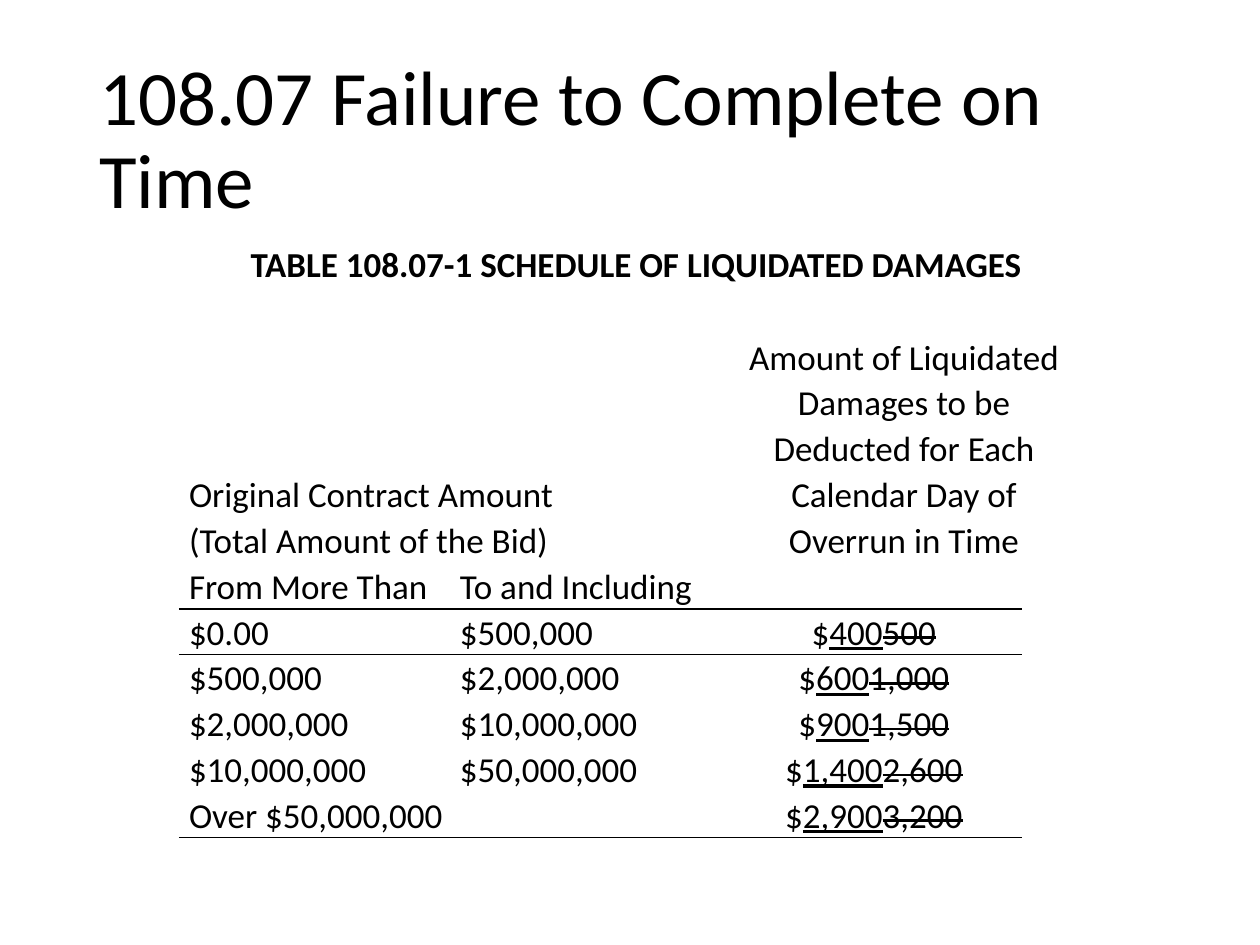
from dataclasses import dataclass
from typing import Any, NamedTuple

from lxml.etree import SubElement
from pptx import Presentation
from pptx.dml.color import RGBColor
from pptx.enum.text import MSO_ANCHOR, PP_ALIGN
from pptx.oxml.ns import qn
from pptx.util import Emu, Inches, Pt


@dataclass(frozen=True)
class Theme:
    font: str = "Calibri"
    ink: str = "000000"
    title_size: int = 44
    body_size: int = 20
    rule_width: int = 1
    line_spacing: float = 1.07
    plain_table: str = "{2D5ABB26-0587-4C30-8999-92F81FD0307C}"


class Area(NamedTuple):
    """Left, top, width and height in percent of the slide."""
    left: float
    top: float
    width: float
    height: float


class Damages(NamedTuple):
    more_than: str
    up_to: str
    new_amount: str
    old_amount: str


THEME = Theme()
WIDTH, HEIGHT = Inches(10), Inches(7.5)
TITLE_AREA = Area(6.9, 5.33, 86.2, 19.33)
CAPTION_AREA = Area(11, 24.67, 79, 6.13)
COLUMN_SHARES = (21.5, 21.9, 23.5, 4.8)
LINE_SHARE = 4.85
HEADER_LINES = ("Amount of Liquidated", "Damages to be", "Deducted for Each",
                "Calendar Day of", "Overrun in Time")
SCHEDULE = (
    Damages("$0.00", "$500,000", "400", "500"),
    Damages("$500,000", "$2,000,000", "600", "1,000"),
    Damages("$2,000,000", "$10,000,000", "900", "1,500"),
    Damages("$10,000,000", "$50,000,000", "1,400", "2,600"),
    Damages("Over $50,000,000", "", "2,900", "3,200"),
)
ROW_LINES = (len(HEADER_LINES), 1) + (1,) * len(SCHEDULE)
TABLE_AREA = Area(14.2, 35.33, sum(COLUMN_SHARES), LINE_SHARE * sum(ROW_LINES))


def across(share: float) -> Emu:
    return Emu(round(WIDTH * share / 100))


def down(share: float) -> Emu:
    return Emu(round(HEIGHT * share / 100))


def place(area: Area) -> tuple[Emu, Emu, Emu, Emu]:
    return across(area.left), down(area.top), across(area.width), down(area.height)


def apply(target: Any, values: dict[str, Any]) -> None:
    for name, value in values.items():
        setattr(target, name, value)


def style_font(font: Any, size: int, **extra: Any) -> None:
    apply(font, {"name": THEME.font, "size": Pt(size), **extra})
    font.color.rgb = RGBColor.from_string(THEME.ink)


def add_text(slide: Any, area: Area, text: str, size: int, anchor: MSO_ANCHOR,
             paragraph_format: dict[str, Any], bold: bool = False) -> None:
    frame = slide.shapes.add_textbox(*place(area)).text_frame
    apply(frame, {"word_wrap": True, "vertical_anchor": anchor})
    paragraph = frame.paragraphs[0]
    apply(paragraph, paragraph_format)
    run = paragraph.add_run()
    run.text = text
    style_font(run.font, size, bold=bold)


def fill_cell(cell: Any, lines: tuple[tuple[str, ...], ...], centred: bool = False) -> None:
    """Write lines of runs: plain, then underlined, then struck out."""
    for index, parts in enumerate(lines):
        frame = cell.text_frame
        paragraph = frame.add_paragraph() if index else frame.paragraphs[0]
        properties = paragraph._p.get_or_add_pPr()
        properties.set("marL", str(Inches(0.1)))
        properties.set("indent", str(-Inches(0.1)))
        apply(paragraph, {"alignment": PP_ALIGN.CENTER if centred else PP_ALIGN.LEFT,
                          "line_spacing": THEME.line_spacing})
        style_font(paragraph.font, THEME.body_size)
        for position, text in enumerate(parts):
            run = paragraph.add_run()
            run.text = text
            style_font(run.font, THEME.body_size, underline=position == 1)
            if position == 2:
                run._r.get_or_add_rPr().set("strike", "sngStrike")


def rule_cell(cell: Any, edge: str) -> None:
    properties = cell._tc.get_or_add_tcPr()
    line = SubElement(properties, qn(f"a:{edge}"), w=str(Pt(THEME.rule_width)))
    SubElement(SubElement(line, qn("a:solidFill")), qn("a:srgbClr"), val=THEME.ink)


def add_schedule(slide: Any) -> None:
    frame = slide.shapes.add_table(len(ROW_LINES), len(COLUMN_SHARES), *place(TABLE_AREA))
    table = frame.table
    apply(table, {"first_row": False, "horz_banding": False})
    for style in table._tbl.iter(qn("a:tableStyleId")):
        style.text = THEME.plain_table
    for column, share in zip(table.columns, COLUMN_SHARES):
        column.width = across(share)
    for row, lines in zip(table.rows, ROW_LINES):
        row.height = down(LINE_SHARE * lines)

    # Rules under the headings and under the last row, then plain cells
    last = len(ROW_LINES) - 1
    edges = {1: "lnB", 2: "lnT", last: "lnB"}
    for row in range(last + 1):
        for column in range(len(COLUMN_SHARES)):
            cell = table.cell(row, column)
            apply(cell, {"margin_left": Inches(0.08), "margin_right": Inches(0.08),
                         "margin_top": 0, "margin_bottom": 0,
                         "vertical_anchor": MSO_ANCHOR.BOTTOM})
            if row in edges and column < 3:
                rule_cell(cell, edges[row])
            cell.fill.background()
            cell.text_frame.paragraphs[0].font.size = Pt(THEME.body_size)

    # Headings
    for row, column in ((0, 0), (0, 2), (last, 0)):
        table.cell(row, column).merge(table.cell(row, column + 1))
    fill_cell(table.cell(0, 0), (("Original Contract Amount",), ("(Total Amount of the Bid)",)))
    fill_cell(table.cell(0, 2), tuple((line,) for line in HEADER_LINES), centred=True)
    for column, heading in enumerate(("From More Than", "To and Including")):
        fill_cell(table.cell(1, column), ((heading,),))

    # Amounts
    for row, damages in enumerate(SCHEDULE, start=2):
        fill_cell(table.cell(row, 0), ((damages.more_than,),))
        if damages.up_to:
            fill_cell(table.cell(row, 1), ((damages.up_to,),))
        fill_cell(table.cell(row, 2), (("$", damages.new_amount, damages.old_amount),),
                  centred=True)


def main() -> None:
    presentation = Presentation()
    apply(presentation, {"slide_width": WIDTH, "slide_height": HEIGHT})
    slide = presentation.slides.add_slide(presentation.slide_layouts[6])
    add_text(slide, TITLE_AREA, "108.07 Failure to Complete on Time", THEME.title_size,
             MSO_ANCHOR.MIDDLE, {"line_spacing": 0.9})
    add_schedule(slide)
    add_text(slide, CAPTION_AREA, "TABLE 108.07-1 SCHEDULE OF LIQUIDATED DAMAGES",
             THEME.body_size, MSO_ANCHOR.TOP,
             {"alignment": PP_ALIGN.CENTER, "line_spacing": THEME.line_spacing,
              "space_after": Pt(5)}, bold=True)
    presentation.save("out.pptx")


if __name__ == "__main__":
    main()
